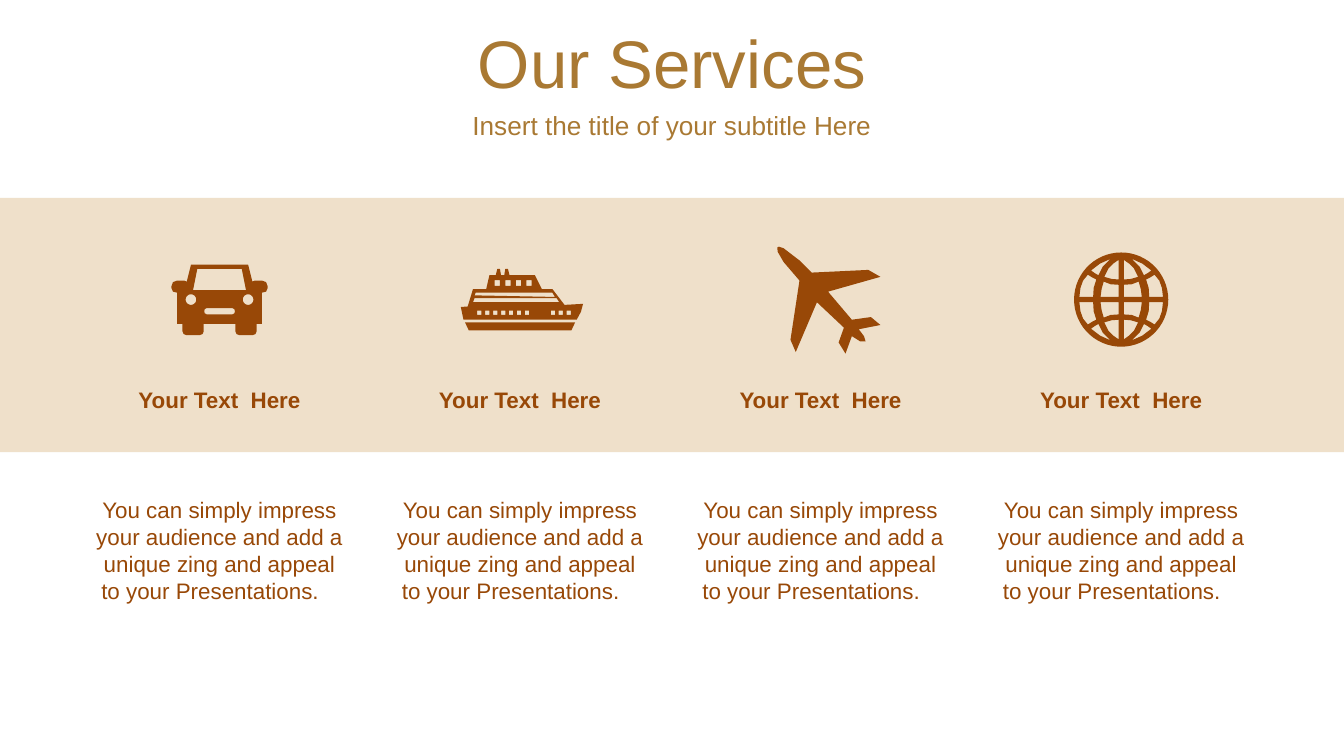
from dataclasses import dataclass
from math import cos, pi, sin

from pptx import Presentation
from pptx.dml.color import RGBColor
from pptx.enum.shapes import MSO_SHAPE
from pptx.enum.text import MSO_ANCHOR, MSO_AUTO_SIZE, PP_ALIGN
from pptx.util import Cm, Pt

GOLD = RGBColor(0xA9, 0x79, 0x33)
BROWN = RGBColor(0x98, 0x48, 0x07)
SAND = RGBColor(0xEF, 0xE0, 0xCA)
FONT = "Arial"

WIDTH, HEIGHT = 25.4, 14.28
FIRST_CENTRE, COLUMN_STEP = 4.15, 5.68
ICON_CENTRE = 5.66

Point = tuple[float, float]
Contour = list[Point]


@dataclass(frozen=True)
class Box:
    """A frame in centimetres."""
    left: float
    top: float
    width: float
    height: float

    def lengths(self) -> tuple:
        return Cm(self.left), Cm(self.top), Cm(self.width), Cm(self.height)


@dataclass(frozen=True)
class Style:
    size: float
    colour: RGBColor
    bold: bool = False


@dataclass(frozen=True)
class Service:
    """Icon contours are centimetres from the icon centre; inner ones are holes."""
    icon: list[Contour]
    heading: str = "Your Text  Here"
    detail: str = ("You can simply impress your audience and add a unique zing "
                   "and appeal to your Presentations.   ")


def rectangle(left: float, top: float, width: float, height: float) -> Contour:
    right, bottom = left + width, top + height
    return [(left, top), (right, top), (right, bottom), (left, bottom)]


def disc(x: float, y: float, radius: float, steps: int = 60) -> Contour:
    angles = [2 * pi * step / steps for step in range(steps)]
    return [(x + radius * cos(a), y + radius * sin(a)) for a in angles]


def symmetric(half: Contour) -> Contour:
    """Close a right-hand half with its mirror image on the left."""
    return half + [(-x, y) for x, y in reversed(half)]


def window_row(left: float, top: float, step: float, count: int,
               width: float, height: float) -> list[Contour]:
    return [rectangle(left + i * step, top, width, height) for i in range(count)]


def car() -> list[Contour]:
    body = [(0.54, -0.66), (0.62, -0.34), (0.67, -0.36), (0.8, -0.36),
            (0.88, -0.33), (0.91, -0.25), (0.91, -0.22), (0.88, -0.15),
            (0.8, -0.13), (0.8, 0.46), (0.7, 0.46), (0.7, 0.6), (0.68, 0.65),
            (0.63, 0.67), (0.37, 0.67), (0.32, 0.65), (0.3, 0.6), (0.3, 0.46)]
    windscreen = [(0.42, -0.58), (0.5, -0.18)]
    grille = [(0.24, 0.16), (0.28, 0.18), (0.29, 0.22), (0.28, 0.26), (0.24, 0.28)]
    lamps = [disc(x, 0, 0.1) for x in (-0.54, 0.54)]
    return [symmetric(half) for half in (body, windscreen, grille)] + lamps


def ship() -> list[Contour]:
    hull = [(-0.28, -0.58), (-0.23, -0.58), (-0.2, -0.46), (0.28, -0.46),
            (0.41, -0.2), (0.61, -0.2), (0.84, 0.1), (1.19, 0.08),
            (1.15, 0.23), (1.07, 0.38), (-1.07, 0.38), (-1.12, 0.14),
            (-0.99, 0.13), (-0.89, -0.2), (-0.64, -0.2), (-0.58, -0.46),
            (-0.46, -0.46), (-0.43, -0.58), (-0.38, -0.58), (-0.36, -0.46),
            (-0.3, -0.46)]
    keel = symmetric([(1.04, 0.43), (0.97, 0.58)])
    upper_deck = [(-0.84, -0.13), (-0.86, -0.08), (0.66, -0.05), (0.61, -0.13)]
    lower_deck = [(-0.86, -0.03), (-0.89, 0.05), (0.74, 0.05), (0.69, -0.03)]
    return [hull, keel, upper_deck, lower_deck,
            *window_row(-0.48, -0.37, 0.2, 4, 0.1, 0.11),
            *window_row(-0.81, 0.21, 0.15, 7, 0.08, 0.08),
            *window_row(0.58, 0.21, 0.15, 3, 0.08, 0.08)]


def plane() -> list[Contour]:
    return [[(1.13, 0.48), (0.72, 0.56), (0.82, 0.69), (0.85, 0.79),
             (0.75, 0.79), (0.59, 0.69), (0.47, 1.02), (0.34, 0.81),
             (0.44, 0.53), (-0.07, 0.05), (-0.47, 0.99), (-0.57, 0.76),
             (-0.4, -0.36), (-0.7, -0.71), (-0.81, -0.9), (-0.82, -0.98),
             (-0.79, -1.0), (-0.7, -0.97), (-0.4, -0.74), (-0.17, -0.51),
             (0.9, -0.56), (1.13, -0.43), (0.14, -0.15), (0.59, 0.38),
             (0.95, 0.33)]]


def globe() -> list[Contour]:
    """A disc whose panes are one quadrant mirrored both ways."""
    panes = [
        [(0.05, 0.05), (0.39, 0.05), (0.37, 0.2), (0.33, 0.34), (0.2, 0.29),
         (0.05, 0.28)],
        [(0.53, 0.05), (0.52, 0.22), (0.47, 0.38), (0.55, 0.42), (0.63, 0.47),
         (0.72, 0.36), (0.77, 0.22), (0.79, 0.05)],
        [(0.05, 0.38), (0.18, 0.39), (0.32, 0.43), (0.24, 0.59), (0.15, 0.68),
         (0.05, 0.75)],
        [(0.43, 0.46), (0.35, 0.62), (0.2, 0.77), (0.4, 0.68), (0.57, 0.55),
         (0.5, 0.5)],
    ]
    return [disc(0, 0, 0.89)] + [[(sx * x, sy * y) for x, y in pane]
                                 for sx in (-1, 1) for sy in (-1, 1)
                                 for pane in panes]


def paint(shape, colour: RGBColor) -> None:
    shape.shadow.inherit = False
    shape.fill.solid()
    shape.fill.fore_color.rgb = colour
    shape.line.fill.background()


def draw_icon(page, contours: list[Contour], centre: float) -> None:
    placed = [[(Cm(centre + x), Cm(ICON_CENTRE + y)) for x, y in contour]
              for contour in contours]
    builder = page.shapes.build_freeform(*placed[0][0], scale=1.0)
    builder.add_line_segments(placed[0][1:], close=True)
    for hole in placed[1:]:
        builder.move_to(*hole[0])
        builder.add_line_segments(hole[1:], close=True)
    paint(builder.convert_to_shape(), BROWN)


def write(shape, text: str, style: Style, anchor: MSO_ANCHOR) -> None:
    frame = shape.text_frame
    frame.word_wrap = True
    frame.auto_size = MSO_AUTO_SIZE.NONE
    frame.vertical_anchor = anchor
    para = frame.paragraphs[0]
    para.alignment = PP_ALIGN.CENTER
    span = para.add_run()
    span.text = text
    span.font.name = FONT
    span.font.size = Pt(style.size)
    span.font.bold = style.bold
    span.font.color.rgb = style.colour


def fill_placeholder(shape, box: Box, text: str, style: Style) -> None:
    shape.left, shape.top, shape.width, shape.height = box.lengths()
    write(shape, text, style, MSO_ANCHOR.MIDDLE)


def add_text(page, box: Box, text: str, style: Style) -> None:
    write(page.shapes.add_textbox(*box.lengths()), text, style, MSO_ANCHOR.TOP)


def add_service(page, service: Service, centre: float) -> None:
    draw_icon(page, service.icon, centre)
    add_text(page, Box(centre - 1.84, 7.16, 3.68, 0.76), service.heading,
             Style(12, BROWN, bold=True))
    add_text(page, Box(centre - 2.64, 9.25, 5.28, 2.31), service.detail,
             Style(12, BROWN))


def main() -> None:
    deck = Presentation()
    deck.slide_width, deck.slide_height = Cm(WIDTH), Cm(HEIGHT)
    page = deck.slides.add_slide(deck.slide_layouts[0])
    fill_placeholder(page.shapes.title, Box(0, 0.36, WIDTH, 1.6),
                     "Our Services", Style(36, GOLD))
    fill_placeholder(page.placeholders[1], Box(0, 1.96, WIDTH, 0.79),
                     "Insert the title of your subtitle Here", Style(14, GOLD))
    band = page.shapes.add_shape(MSO_SHAPE.RECTANGLE,
                                 *Box(0, 3.74, WIDTH, 4.8).lengths())
    paint(band, SAND)
    for column, icon in enumerate((car(), ship(), plane(), globe())):
        add_service(page, Service(icon), FIRST_CENTRE + column * COLUMN_STEP)
    deck.save("out.pptx")


if __name__ == "__main__":
    main()
